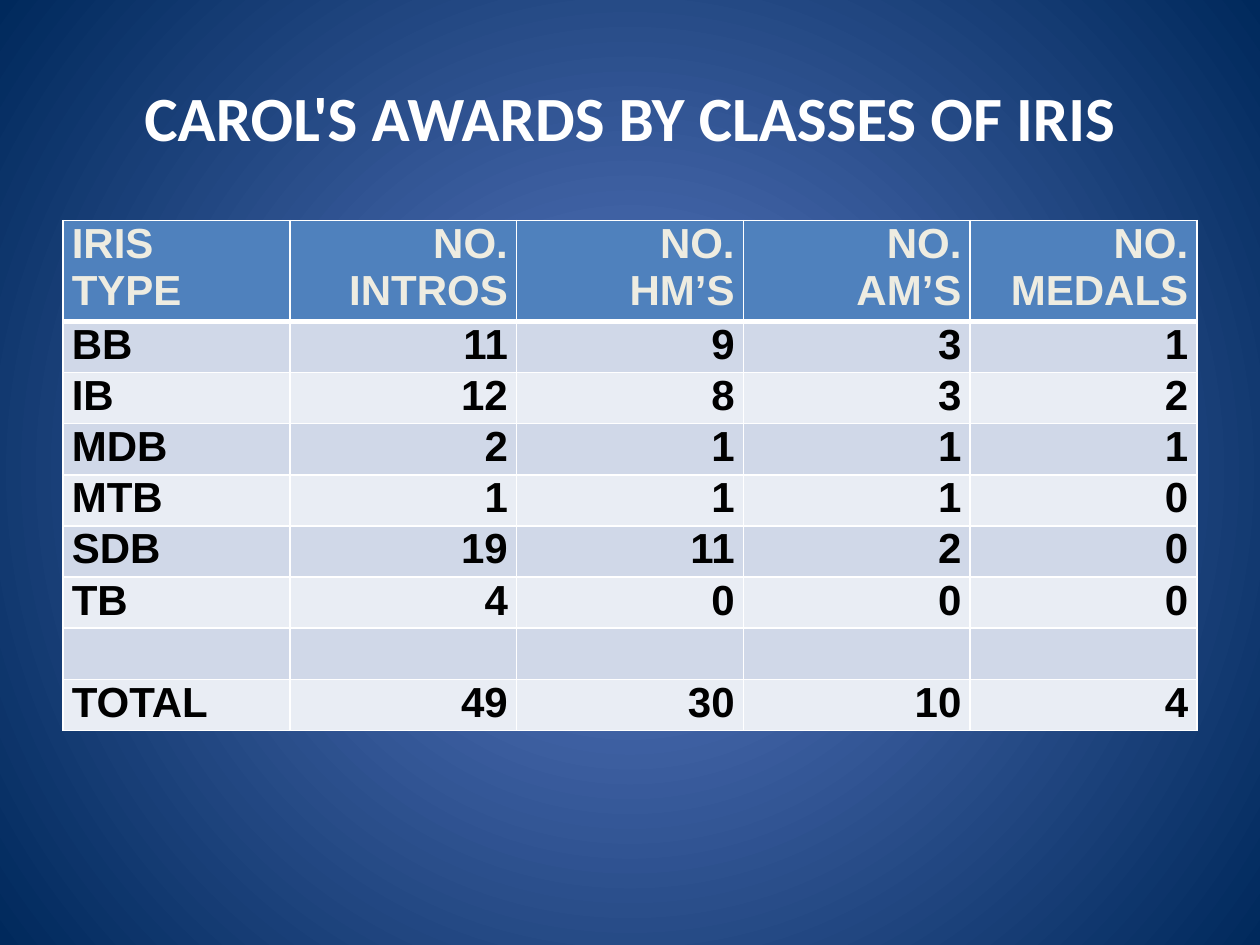
from dataclasses import dataclass

from lxml.etree import SubElement
from pptx import Presentation
from pptx.dml.color import RGBColor as RGB
from pptx.enum.text import MSO_ANCHOR as Anchor, PP_ALIGN as Align
from pptx.oxml import parse_xml
from pptx.oxml.ns import nsdecls, qn
from pptx.util import Inches, Pt


@dataclass(frozen=True)
class Theme:
    white: str = "FFFFFF"
    black: str = "000000"
    cream: str = "EEECE1"
    head: str = "4F81BD"
    bands: tuple = ("D0D8E8", "E9EDF4")
    glow: tuple = ("5E7CC5", "00295C")
    title: int = 36
    body: int = 24
    thin: int = 1
    thick: int = 3


THEME = Theme()
HEADS = ["IRIS\nTYPE", "NO.\nINTROS", "NO.\nHM’S", "NO.\nAM’S", "NO.\nMEDALS"]
AWARDS = [
    ("BB", 11, 9, 3, 1),
    ("IB", 12, 8, 3, 2),
    ("MDB", 2, 1, 1, 1),
    ("MTB", 1, 1, 1, 0),
    ("SDB", 19, 11, 2, 0),
    ("TB", 4, 0, 0, 0),
    ("",) * 5,
    ("TOTAL", 49, 30, 10, 4),
]


def write(frame, text, font="Arial", size=THEME.body, color=THEME.black,
          align=Align.LEFT):
    para = frame.paragraphs[0]
    para.text = text
    para.alignment = align
    for run in para.runs:
        run.font.name = font
        run.font.size = Pt(size)
        run.font.bold = True
        run.font.color.rgb = RGB.from_string(color)


def add_glow(slide):
    """Fill the background with a gradient spreading from the centre."""
    fill = slide.background.fill
    fill.gradient()
    for stop, color in zip(fill.gradient_stops, THEME.glow):
        stop.color.rgb = RGB.from_string(color)
    grad = slide.element.find(".//" + qn("a:gradFill"))
    grad.remove(grad.find(qn("a:lin")))
    shade = SubElement(grad, qn("a:path"), path="circle")
    SubElement(shade, qn("a:fillToRect"), l="50000", t="50000",
               r="50000", b="50000")


def add_title(slide, text, left, top, width, height):
    frame = slide.shapes.add_textbox(left, top, width, height).text_frame
    frame.word_wrap = True
    frame.vertical_anchor = Anchor.MIDDLE
    write(frame, text, font="Calibri", size=THEME.title, color=THEME.white,
          align=Align.CENTER)


def set_edges(cell, top, bottom):
    """Draw the four borders, with the given top and bottom widths."""
    widths = {"L": THEME.thin, "R": THEME.thin, "T": top, "B": bottom}
    props = cell._tc.get_or_add_tcPr()
    for spot, (side, width) in enumerate(widths.items()):
        props.insert(spot, parse_xml(
            f'<a:ln{side} {nsdecls("a")} w="{Pt(width)}"><a:solidFill>'
            f'<a:srgbClr val="{THEME.white}"/></a:solidFill></a:ln{side}>'))


def add_awards(slide, left, top, width, height, head):
    rows = [HEADS, *AWARDS]
    table = slide.shapes.add_table(
        len(rows), len(HEADS), left, top, width, height).table
    table.first_row = table.horz_banding = False
    for col in table.columns:
        col.width = width // len(HEADS)
    for r, values in enumerate(rows):
        table.rows[r].height = head if r == 0 else (height - head) // len(AWARDS)
        back = THEME.bands[(r - 1) % 2] if r else THEME.head
        for c, value in enumerate(values):
            cell = table.cell(r, c)
            cell.margin_left = cell.margin_right = Inches(0.07)
            cell.margin_top = cell.margin_bottom = 0
            cell.fill.solid()
            cell.fill.fore_color.rgb = RGB.from_string(back)
            set_edges(cell, THEME.thick if r == 1 else THEME.thin,
                      THEME.thick if r == 0 else THEME.thin)
            write(cell.text_frame, str(value),
                  color=THEME.black if r else THEME.cream,
                  align=Align.RIGHT if c else Align.LEFT)


def main():
    deck = Presentation()
    deck.slide_width, deck.slide_height = Inches(10), Inches(7.5)
    slide = deck.slides.add_slide(deck.slide_layouts[6])
    add_glow(slide)
    add_title(slide, "CAROL'S AWARDS BY CLASSES OF IRIS",
              Inches(0.5), Inches(0.3), Inches(9), Inches(1.25))
    add_awards(slide, Inches(0.5), Inches(1.75), Inches(9), Inches(4),
               head=Inches(0.75))
    deck.save("out.pptx")


if __name__ == "__main__":
    main()
